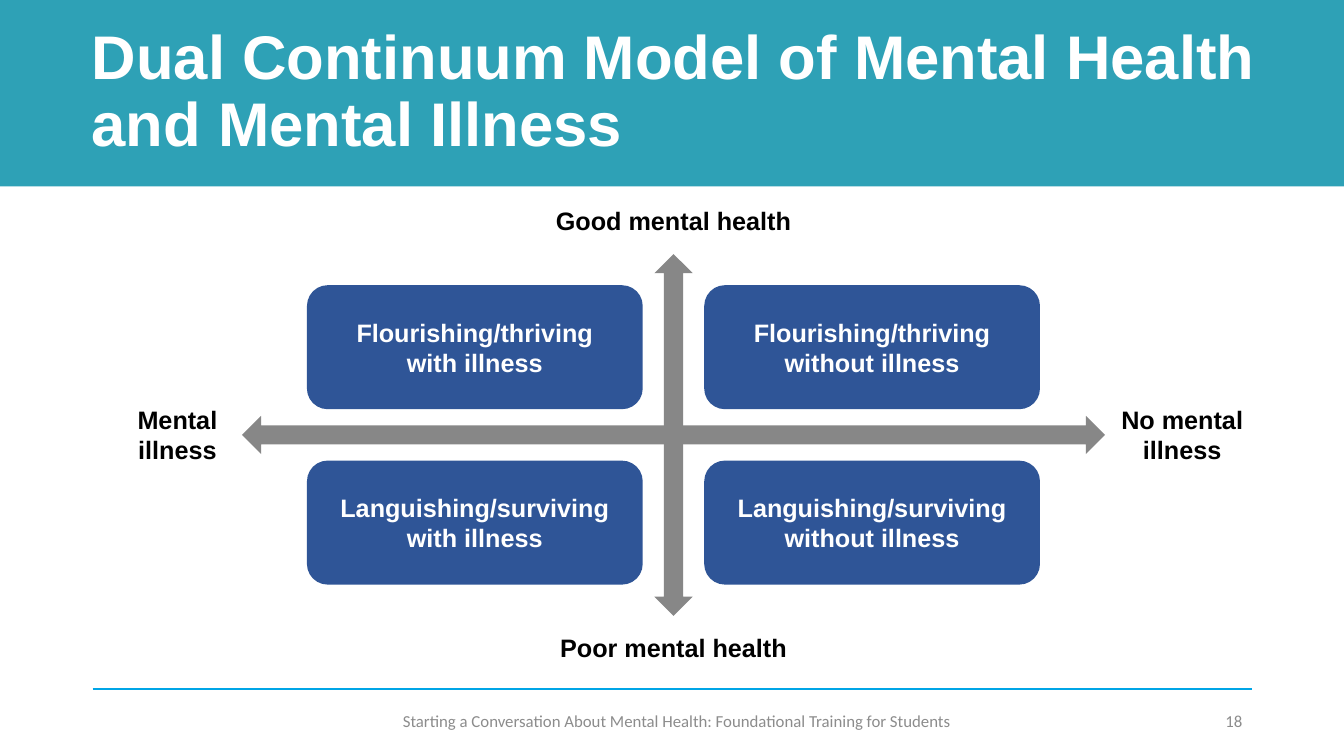
from dataclasses import dataclass
from itertools import product

from lxml.etree import SubElement
from pptx import Presentation
from pptx.dml.color import RGBColor
from pptx.enum.shapes import MSO_CONNECTOR, MSO_SHAPE
from pptx.enum.text import MSO_ANCHOR, PP_ALIGN
from pptx.oxml.ns import qn
from pptx.util import Inches, Pt


@dataclass(frozen=True)
class Theme:
    """Colours, fonts and type sizes of the slide."""
    banner: str = "2EA1B6"
    quadrant: str = "2F5597"
    axis: str = "878787"
    rule: str = "00A5E6"
    muted: str = "8C8C8C"
    light: str = "FFFFFF"
    dark: str = "000000"
    body_font: str = "Arial"
    footer_font: str = "Calibri"
    title_size: int = 44
    label_size: int = 18
    footer_size: int = 12


THEME = Theme()
WIDTH, HEIGHT = 13.33, 7.5


def write(holder, text, size=THEME.label_size, color=THEME.dark, font=THEME.body_font,
          bold=True, align=PP_ALIGN.CENTER, anchor=MSO_ANCHOR.MIDDLE,
          inset=(0.1, 0.05), spacing=None):
    """Write text into a shape, one paragraph per line."""
    frame = holder.text_frame
    frame.word_wrap = True
    frame.vertical_anchor = anchor
    frame.margin_left, frame.margin_right = Inches(inset[0]), Inches(0.1)
    frame.margin_top = frame.margin_bottom = Inches(inset[1])
    for index, line in enumerate(text.split("\n")):
        paragraph = frame.add_paragraph() if index else frame.paragraphs[0]
        paragraph.alignment = align
        if spacing:
            paragraph.line_spacing = spacing
        run = paragraph.add_run()
        run.text = line
        run.font.size, run.font.name, run.font.bold = Pt(size), font, bold
        run.font.color.rgb = RGBColor.from_string(color)


def add_block(slide, preset, box, fill):
    """Add a plain filled preset shape."""
    block = slide.shapes.add_shape(preset, *map(Inches, box))
    block.shadow.inherit = False
    block.fill.solid()
    block.fill.fore_color.rgb = RGBColor.from_string(fill)
    block.line.fill.background()
    return block


def add_label(slide, box, text, **text_format):
    """Add a text box."""
    write(slide.shapes.add_textbox(*map(Inches, box)), text, **text_format)


def add_banner(slide, box, title):
    """Fill the box with the title banner."""
    banner = add_block(slide, MSO_SHAPE.RECTANGLE, box, THEME.banner)
    write(banner, title, size=THEME.title_size, color=THEME.light,
          align=PP_ALIGN.LEFT, inset=(0.91, 0.05), spacing=0.9)


def add_axes(slide, box, thickness=0.38):
    """Draw four arrows from the centre of the box to its sides."""
    left, top, width, height = box
    mid_x, mid_y = left + width / 2, top + height / 2
    row, column = mid_y - thickness / 2, mid_x - thickness / 2
    arrows = {
        MSO_SHAPE.RIGHT_ARROW: (mid_x, row, width / 2, thickness),
        MSO_SHAPE.LEFT_ARROW: (left, row, width / 2, thickness),
        MSO_SHAPE.DOWN_ARROW: (column, mid_y, thickness, height / 2),
        MSO_SHAPE.UP_ARROW: (column, top, thickness, height / 2),
    }
    for preset, place in arrows.items():
        add_block(slide, preset, place, THEME.axis)


def add_quadrants(slide, box, states, conditions):
    """Place one rounded box in each quarter around the centre of the box."""
    left, top, width, height = box
    card_w, card_h, gap_x, gap_y = 3.33, 1.23, 0.61, 0.51
    first_x = left + width / 2 - gap_x / 2 - card_w
    first_y = top + height / 2 - gap_y / 2 - card_h
    for (column, condition), (row, state) in product(enumerate(conditions), enumerate(states)):
        place = (first_x + column * (card_w + gap_x), first_y + row * (card_h + gap_y),
                 card_w, card_h)
        card = add_block(slide, MSO_SHAPE.ROUNDED_RECTANGLE, place, THEME.quadrant)
        write(card, f"{state}\n{condition}", color=THEME.light, inset=(0.1, 0.25))


def add_axis_labels(slide, box, top_text, bottom_text, left_text, right_text):
    """Name the four ends of the axes just outside the box."""
    left, top, width, height = box
    wide, line_h, pair_h = 3.35, 0.4, 0.71
    start_x = left + width / 2 - wide / 2
    start_y = top + height / 2 - pair_h / 2
    labels = {
        top_text: (start_x, top - 0.53, wide, line_h),
        bottom_text: (start_x, top + height + 0.11, wide, line_h),
        left_text: (left - 1.18, start_y, 1.08, pair_h),
        right_text: (left + width + 0.06, start_y, 1.41, pair_h),
    }
    for text, place in labels.items():
        add_label(slide, place, text, anchor=MSO_ANCHOR.TOP)


def add_footer(slide, box, text, number):
    """Draw the rule along the top of the box, the footer text and the page number."""
    left, top, width, height = box
    rule = slide.shapes.add_connector(
        MSO_CONNECTOR.STRAIGHT, *map(Inches, (left, top, left + width, top)))
    rule.line.color.rgb = RGBColor.from_string(THEME.rule)
    rule.line.width = Pt(1.5)
    SubElement(rule._element.spPr, qn("a:effectLst"))
    line_h = 0.4
    row = top + height - line_h
    small = dict(size=THEME.footer_size, color=THEME.muted, font=THEME.footer_font, bold=False)
    add_label(slide, (left + 2.71, row, 6.17, line_h), text, **small)
    add_label(slide, (left + width - 3, row, 3, line_h), number, align=PP_ALIGN.RIGHT, **small)


def main():
    """Build and save the slide."""
    deck = Presentation()
    deck.slide_width, deck.slide_height = Inches(WIDTH), Inches(HEIGHT)
    slide = deck.slides.add_slide(deck.slide_layouts[6])
    model = (2.4, 2.52, 8.56, 3.59)
    add_banner(slide, (0, 0, WIDTH, 1.85),
               "Dual Continuum Model of Mental Health and Mental Illness")
    add_axes(slide, model)
    add_quadrants(slide, model, ("Flourishing/thriving", "Languishing/surviving"),
                  ("with illness", "without illness"))
    add_axis_labels(slide, model, "Good mental health", "Poor mental health",
                    "Mental\nillness", "No mental\nillness")
    add_footer(slide, (0.92, 6.84, 11.5, 0.51),
               "Starting a Conversation About Mental Health: "
               "Foundational Training for Students", "18")
    deck.save("out.pptx")


if __name__ == "__main__":
    main()
